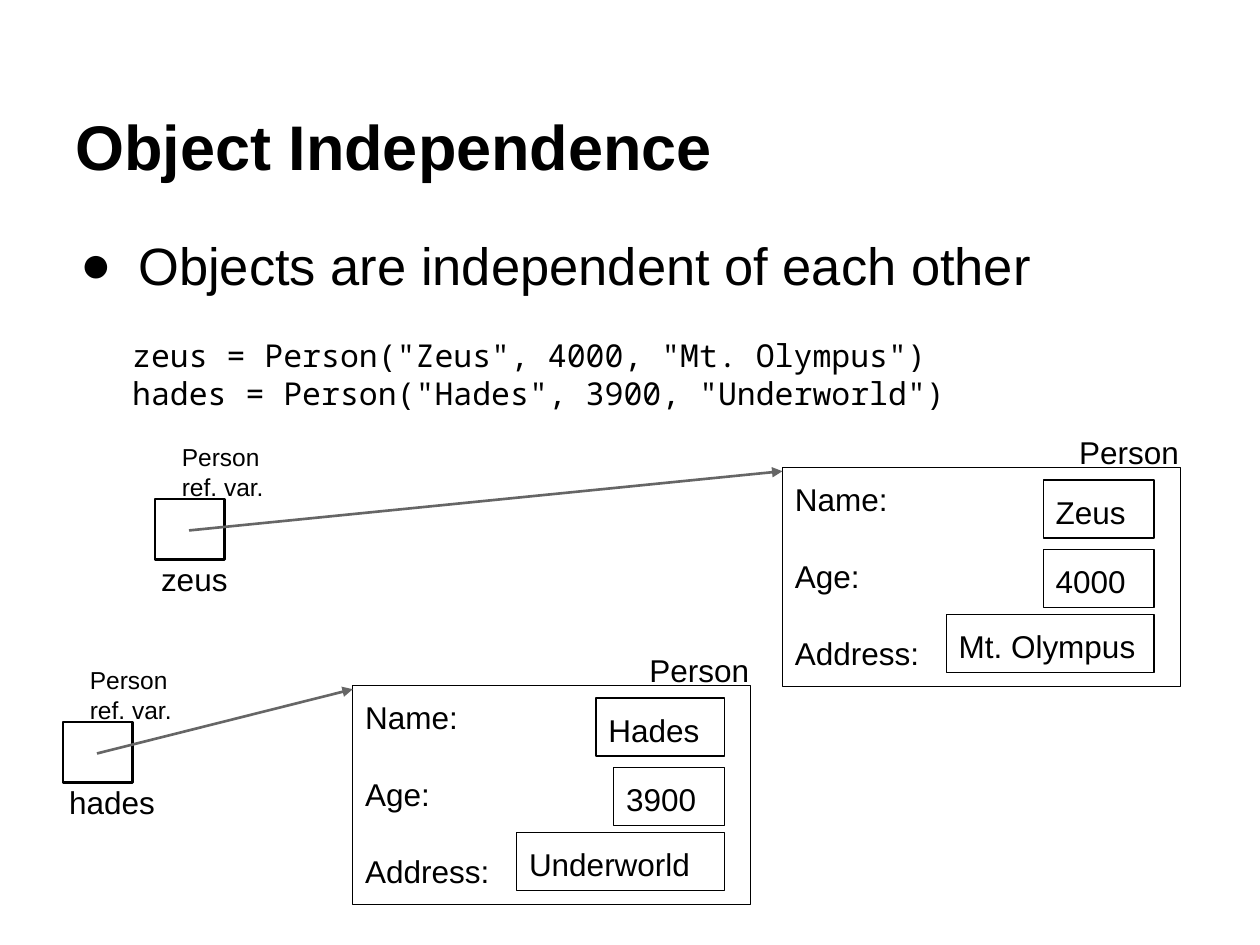
from lxml.etree import SubElement
from pptx import Presentation
from pptx.dml.color import RGBColor
from pptx.enum.shapes import MSO_CONNECTOR, MSO_SHAPE
from pptx.enum.text import MSO_ANCHOR, PP_ALIGN
from pptx.oxml.ns import qn
from pptx.util import Inches, Pt

BLACK = RGBColor(0x00, 0x00, 0x00)
GRAY = RGBColor(0x66, 0x66, 0x66)
SANS = "Arial"
MONO = "Noto Sans Mono"

# The slide is a grid of 100 columns and 75 rows
WIDTH, HEIGHT = Inches(10), Inches(7.5)
COLUMN, ROW = WIDTH / 100, HEIGHT / 75
INSET = Inches(0.1)

REF_SIZE = (5.5, 4.8)
REF_CENTER = (2.7, 2.5)
CARD_SIZE = (31.6, 17.4)
VALUE_RIGHT = 29.5
VALUE_HEIGHT = 4.6
VALUE_ROWS = (1, 6.5, 11.7)
FIELDS = ("Name:", "Age:", "Address:")


def grid(*lengths):
    """Turn alternating columns and rows into slide lengths."""
    return [round(n * (ROW if i % 2 else COLUMN)) for i, n in enumerate(lengths)]


def write(shape, text, size=18, font=SANS, bold=False, align=PP_ALIGN.LEFT,
          anchor=MSO_ANCHOR.TOP, gap=0):
    frame = shape.text_frame
    frame.text = text
    frame.word_wrap = True
    frame.vertical_anchor = anchor
    frame.margin_left = frame.margin_right = INSET
    frame.margin_top = frame.margin_bottom = INSET
    for index, paragraph in enumerate(frame.paragraphs):
        paragraph.alignment = align
        paragraph.space_before = Pt(gap if index else 0)
        for run in paragraph.runs:
            run.font.size = Pt(size)
            run.font.name = font
            run.font.bold = bold
            run.font.color.rgb = BLACK


def add_label(shapes, box, text, **style):
    label = shapes.add_textbox(*grid(*box))
    write(label, text, **style)
    return label


def add_box(shapes, box, line_width, text="", **style):
    outline = shapes.add_shape(MSO_SHAPE.RECTANGLE, *grid(*box))
    outline.shadow.inherit = False
    outline.fill.background()
    outline.line.color.rgb = BLACK
    outline.line.width = Pt(line_width)
    write(outline, text, **style)


def add_bullet(paragraph):
    properties = paragraph._p.get_or_add_pPr()
    properties.set("marL", str(Inches(0.5)))
    properties.set("indent", str(-Inches(0.46)))
    SubElement(properties, qn("a:buFont"), typeface=SANS)
    SubElement(properties, qn("a:buChar"), char="●")


def add_arrow(shapes, start, end):
    arrow = shapes.add_connector(MSO_CONNECTOR.STRAIGHT, *grid(*start, *end))
    arrow.line.color.rgb = GRAY
    arrow.line.width = Pt(1.5)
    SubElement(arrow.line._get_or_add_ln(), qn("a:tailEnd"), type="triangle")
    SubElement(arrow._element.spPr, qn("a:effectLst"))


def add_reference(slide, left, top, name):
    """A reference variable: square, name below, caption above."""
    shapes = slide.shapes.add_group_shape().shapes
    add_label(shapes, (left - 0.5, top + 3.85, 9.6, 4.8), name)
    add_box(shapes, (left, top, *REF_SIZE), 1.5)
    add_label(shapes, (left + 1.15, top - 5.5, 9.6, 3.7), "Person ref. var.", size=14)


def add_person(slide, left, top, values):
    """A Person object: field names, boxed values and the class name."""
    shapes = slide.shapes.add_group_shape().shapes
    add_box(shapes, (left, top, *CARD_SIZE), 0.75, "\n".join(FIELDS), gap=22.5)
    for row, (value, width) in zip(VALUE_ROWS, values):
        box = (left + VALUE_RIGHT - width, top + row, width, VALUE_HEIGHT)
        add_box(shapes, box, 0.75, value)
    add_label(shapes, (left + 22.4, top - 3.75, 10.2, 5.3), "Person",
              align=PP_ALIGN.CENTER)


def main():
    presentation = Presentation()
    presentation.slide_width, presentation.slide_height = WIDTH, HEIGHT
    slide = presentation.slides.add_slide(presentation.slide_layouts[6])

    # Heading, statement and code
    add_label(slide.shapes, (5, 3, 90, 12.5), "Object Independence",
              size=36, bold=True, anchor=MSO_ANCHOR.BOTTOM)
    statement = add_label(slide.shapes, (5, 17.5, 90, 54.3),
                          "Objects are independent of each other", size=30)
    add_bullet(statement.text_frame.paragraphs[0])
    add_label(slide.shapes, (9.5, 25.7, 85.5, 10.5),
              'zeus = Person("Zeus", 4000, "Mt. Olympus")\n'
              'hades = Person("Hades", 3900, "Underworld")', font=MONO)

    # Each variable points to its own object
    instances = (
        ("zeus", (12.3, 39.6), (62.1, 37.1),
         (("Zeus", 8.8), ("4000", 8.8), ("Mt. Olympus", 16.5))),
        ("hades", (5, 57.3), (28, 54.4),
         (("Hades", 10.2), ("3900", 8.8), ("Underworld", 16.5))),
    )
    for name, (ref_left, ref_top), (left, top), values in instances:
        add_reference(slide, ref_left, ref_top, name)
        add_person(slide, left, top, values)
        start = (ref_left + REF_CENTER[0], ref_top + REF_CENTER[1])
        add_arrow(slide.shapes, start, (left, top + 0.3))

    presentation.save("out.pptx")


if __name__ == "__main__":
    main()
